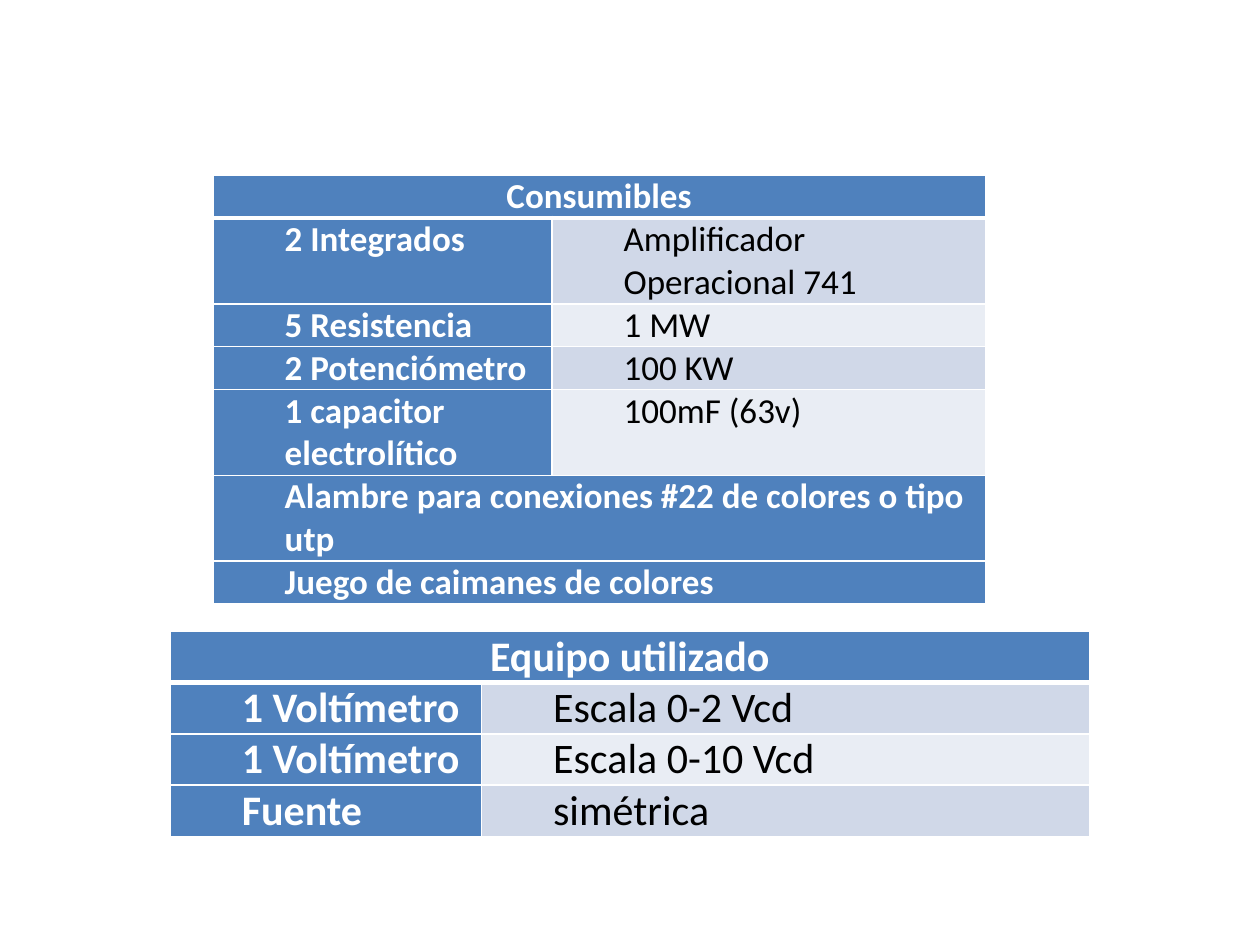
from lxml import etree
from pptx import Presentation
from pptx.dml.color import RGBColor
from pptx.enum.text import PP_ALIGN
from pptx.oxml.ns import qn
from pptx.util import Inches, Pt

CENTER = PP_ALIGN.CENTER
FONT = "Calibri"
BLUE, WHITE, BLACK = "4F81BD", "FFFFFF", "000000"
BANDS = ["D0D8E8", "E9EDF4"]

# Each row: cell texts (one text spans both columns) and its number of lines
TABLES = [
    {"at": (1.69, 1.39), "cols": (2.69, 3.44), "size": 20, "line": 0.34,
     "rows": [
         (["Consumibles"], 1),
         (["2 Integrados", "Amplificador Operacional 741"], 2),
         (["5 Resistencia", "1 MW"], 1),
         (["2 Potenciómetro", "100 KW"], 1),
         (["1 capacitor electrolítico", "100mF (63v)"], 2),
         (["Alambre para conexiones #22 de colores o tipo utp"], 2),
         (["Juego de caimanes de colores"], 1),
     ]},
    {"at": (1.35, 5.01), "cols": (2.47, 4.83), "size": 24, "line": 0.4,
     "rows": [
         (["Equipo utilizado"], 1),
         (["1 Voltímetro", "Escala 0-2 Vcd"], 1),
         (["1 Voltímetro", "Escala 0-10 Vcd"], 1),
         (["Fuente", "simétrica"], 1),
     ]},
]


def color(code):
    return RGBColor.from_string(code)


def border(cell, widths):
    props = cell._tc.get_or_add_tcPr()
    for i, (side, width) in enumerate(zip("LRTB", widths)):
        line = etree.Element(qn("a:ln" + side), w=str(Pt(width)))
        fill = etree.SubElement(line, qn("a:solidFill"))
        etree.SubElement(fill, qn("a:srgbClr"), val=WHITE)
        props.insert(i, line)


def style(cell, text, size, head, key, band):
    cell.margin_left = cell.margin_right = Inches(0.07)
    cell.margin_top = cell.margin_bottom = 0
    para = cell.text_frame.paragraphs[0]
    para.text = text
    if head:
        para.alignment = CENTER
    else:
        para._p.get_or_add_pPr().set("marL", str(Inches(0.5)))
    font = para.runs[0].font
    font.name, font.size, font.bold = FONT, Pt(size), key
    font.color.rgb = color(WHITE if key else BLACK)
    cell.fill.solid()
    cell.fill.fore_color.rgb = color(BLUE if key else band)


def build(slide, spec):
    rows, cols, line = spec["rows"], spec["cols"], spec["line"]
    left, top = spec["at"]
    high = line * sum(count for _, count in rows)
    box = (Inches(n) for n in (left, top, sum(cols), high))
    table = slide.shapes.add_table(len(rows), len(cols), *box).table
    for col, width in zip(table.columns, cols):
        col.width = Inches(width)
    for r, (texts, count) in enumerate(rows):
        table.rows[r].height = Inches(line * count)
        # Header has a thick rule below it, shared with the first body row
        widths = (1, 1, 3 if r == 1 else 1, 3 if r == 0 else 1)
        for c in range(len(cols)):
            border(table.cell(r, c), widths)
        if len(texts) == 1:
            table.cell(r, 0).merge(table.cell(r, len(cols) - 1))
        for c, text in enumerate(texts):
            style(table.cell(r, c), text, spec["size"],
                  r == 0, c == 0, BANDS[(r - 1) % 2])


deck = Presentation()
deck.slide_width, deck.slide_height = Inches(10), Inches(7.5)
page = deck.slides.add_slide(deck.slide_layouts[6])
for item in TABLES:
    build(page, item)
deck.save("out.pptx")
